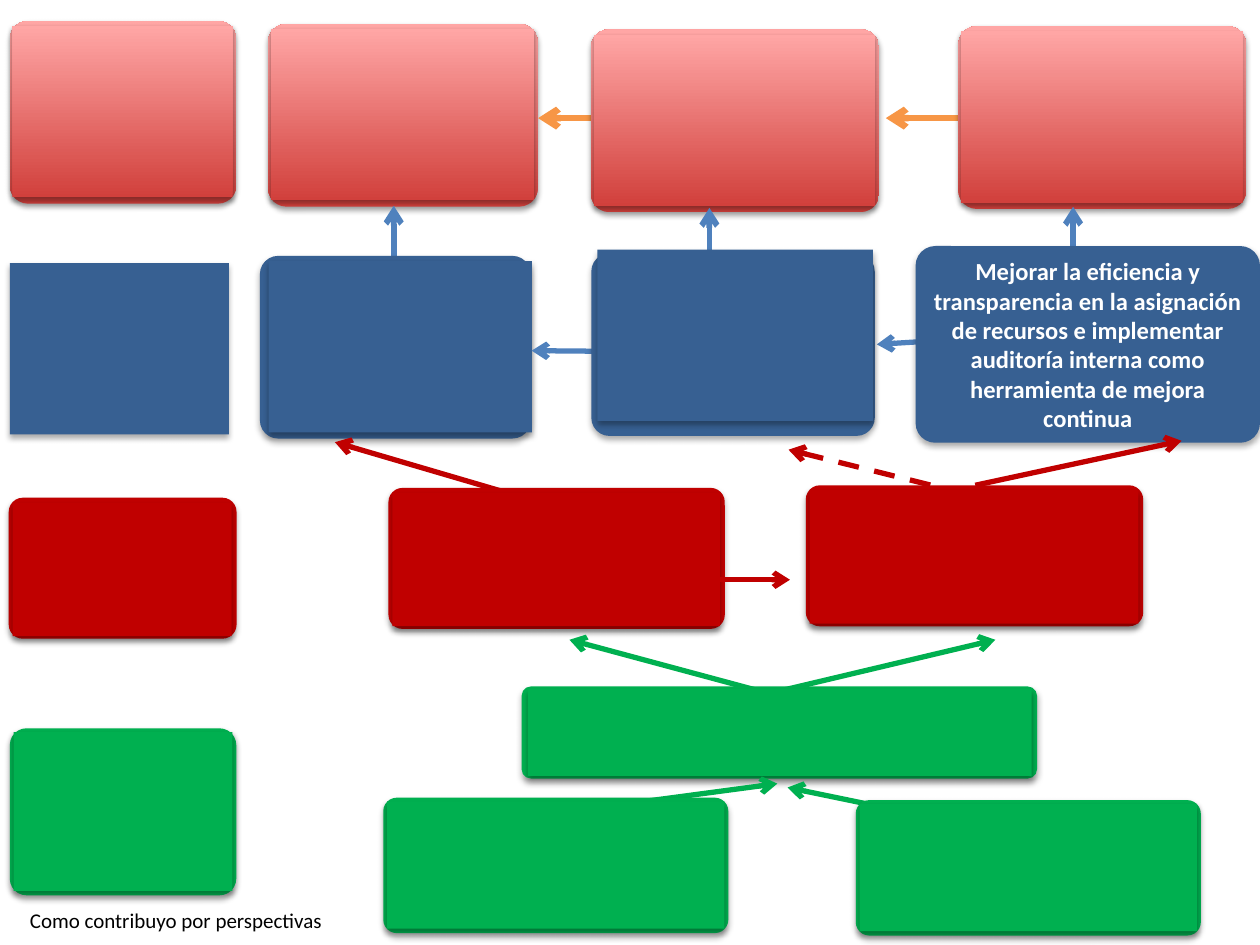
from dataclasses import dataclass

from lxml import etree
from pptx import Presentation
from pptx.dml.color import RGBColor
from pptx.enum.dml import MSO_LINE
from pptx.enum.shapes import MSO_CONNECTOR, MSO_SHAPE
from pptx.enum.text import MSO_ANCHOR, PP_ALIGN
from pptx.oxml.ns import qn
from pptx.util import Pt

DASH = MSO_LINE.DASH
STRAIGHT = MSO_CONNECTOR.STRAIGHT
RECTANGLE, ROUNDED = MSO_SHAPE.RECTANGLE, MSO_SHAPE.ROUNDED_RECTANGLE
MIDDLE = MSO_ANCHOR.MIDDLE
CENTER = PP_ALIGN.CENTER

FONT = "Calibri"
COLORS = {
    "coral_bottom": "D1403C",
    "coral_top": "FFA6A5",
    "blue": "376092",
    "red": "C00000",
    "green": "00B050",
    "orange_arrow": "F79646",
    "blue_arrow": "4F81BD",
    "shadow": "000000",
    "light": "FFFFFF",
    "dark": "000000",
}
INSETS = {
    "coral": (1.5, 3, 2, 3.5),
    "red": (2.2, 2.8, 2.8, 1.5),
    "green": (2.2, 2.2, 2.2, 2.5),
}


@dataclass(frozen=True)
class Box:
    left: float
    top: float
    width: float
    height: float

    def inset(self, left: float, top: float, right: float, bottom: float) -> "Box":
        return Box(self.left + left, self.top + top,
                   self.width - left - right, self.height - top - bottom)

    def lengths(self) -> tuple:
        return Pt(self.left), Pt(self.top), Pt(self.width), Pt(self.height)


@dataclass(frozen=True)
class Card:
    theme: str
    box: Box
    insets: tuple = ()
    text: str = ""


@dataclass(frozen=True)
class Arrow:
    color: str
    start: tuple
    end: tuple
    weight: float = 3
    dashed: bool = False


PERSPECTIVE_MAP = [
    Card("coral", Box(153.2, 13.7, 154, 104.4)),
    Arrow("orange_arrow", (371.5, 67.5), (307.5, 67.5), 3.75),
    Arrow("orange_arrow", (557.5, 67.5), (506.2, 67.5), 3.75),
    Card("coral", Box(547.7, 15, 164.4, 104.4)),
    Card("coral", Box(337.7, 16.8, 164.6, 104.4)),
    Arrow("blue_arrow", (225, 194.4), (225, 117.6), 3.25),
    Card("blue", Box(148.5, 146.2, 154.8, 104.4), (5, 3, -0.7, 3.5)),
    Arrow("blue_arrow", (405.4, 196.5), (405.4, 118.8), 3.25),
    Arrow("blue_arrow", (613.2, 195), (613.2, 118.2), 3.25),
    Arrow("blue_arrow", (340.5, 200.7), (303.8, 200.4)),
    Arrow("blue_arrow", (675.4, 186), (501.1, 196.8)),
    Card("blue", Box(337.9, 144.7, 162, 104.4), (3.5, -2, 1, 8.5)),
    Card("blue", Box(523.2, 140.6, 196.8, 112.4),
         text="Mejorar la eficiencia y transparencia en la asignación de recursos "
              "e implementar auditoría interna como herramienta de mejora continua"),
    Arrow("red", (314, 288.7), (191.4, 252.7)),
    Card("red", Box(222, 278.8, 192.2, 80.6)),
    Arrow("red", (557.3, 277.3), (675.2, 251.9)),
    Arrow("red", (572.4, 287.3), (450.6, 257), dashed=True),
    Card("red", Box(460.5, 277.3, 192.8, 80.6)),
    Arrow("red", (404, 331.3), (451.4, 331.3)),
    Arrow("green", (440.6, 396), (568.8, 365.6)),
    Arrow("green", (468, 404), (325.4, 365.6)),
    Card("green", Box(298.1, 392.3, 294.5, 52.6), (3.6, 1.5, 3, 1.5)),
    Arrow("green", (315.4, 465), (444.2, 447.8)),
    Arrow("green", (578.9, 476.6), (450, 450)),
    Card("green", Box(489, 457.2, 197.2, 77.4)),
    Card("green", Box(219, 455.8, 197.2, 77.4)),
    Card("coral", Box(5.6, 12, 129.4, 104.4)),
    Card("blue", Box(5.6, 150.3, 125.2, 98)),
    Card("red", Box(5, 284.4, 130.2, 80.6)),
    Card("green", Box(5.6, 416.2, 129.4, 95.4)),
]


def rgb(name: str) -> RGBColor:
    return RGBColor.from_string(COLORS[name])


def add_shadow(shape, theme: str) -> None:
    shape.shadow.inherit = False
    blur, distance, alpha = (3.1, 1.8, 35) if theme == "coral" else (3.5, 2.2, 32)
    effects = shape.element.spPr.find(qn("a:effectLst"))
    shadow = etree.SubElement(effects, qn("a:outerShdw"), blurRad=str(Pt(blur)),
                              dist=str(Pt(distance)), dir="5400000", rotWithShape="0")
    color = etree.SubElement(shadow, qn("a:srgbClr"), val=COLORS["shadow"])
    etree.SubElement(color, qn("a:alpha"), val=str(alpha * 1000))


def add_panel(slide, geometry, box: Box, theme: str):
    panel = slide.shapes.add_shape(geometry, *box.lengths())
    if geometry == ROUNDED:
        panel.adjustments[0] = 0.1
    if theme == "coral":
        panel.fill.gradient()
        panel.fill.gradient_angle = 90
        for stop, name in zip(panel.fill.gradient_stops, ("coral_bottom", "coral_top")):
            stop.color.rgb = rgb(name)
    else:
        panel.fill.solid()
        panel.fill.fore_color.rgb = rgb(theme)
    panel.line.fill.background()
    add_shadow(panel, theme)
    return panel


def write_text(shape, text: str, size: float, color: str, bold: bool = False) -> None:
    frame = shape.text_frame
    frame.word_wrap = True
    frame.vertical_anchor = MIDDLE
    run = frame.paragraphs[0].add_run()
    run.text = text
    run.font.name = FONT
    run.font.size = Pt(size)
    run.font.bold = bold
    run.font.color.rgb = rgb(color)


def draw_card(slide, card: Card) -> None:
    insets = card.insets or INSETS.get(card.theme)
    if insets is None:
        geometry = ROUNDED if card.text else RECTANGLE
        panel = add_panel(slide, geometry, card.box, card.theme)
        if card.text:
            write_text(panel, card.text, 14, "light", bold=True)
            panel.text_frame.margin_left = panel.text_frame.margin_right = Pt(5)
            panel.text_frame.paragraphs[0].alignment = CENTER
        return
    add_panel(slide, ROUNDED, card.box, card.theme)
    add_panel(slide, RECTANGLE, card.box.inset(*insets), card.theme)


def draw_arrow(slide, arrow: Arrow) -> None:
    points = (Pt(value) for value in arrow.start + arrow.end)
    connector = slide.shapes.add_connector(STRAIGHT, *points)
    connector.line.color.rgb = rgb(arrow.color)
    connector.line.width = Pt(arrow.weight)
    if arrow.dashed:
        connector.line.dash_style = DASH
    etree.SubElement(connector.line._get_or_add_ln(), qn("a:tailEnd"), type="arrow")
    etree.SubElement(connector.element.spPr, qn("a:effectLst"))


def main() -> None:
    presentation = Presentation()
    presentation.slide_width, presentation.slide_height = Pt(720), Pt(540)
    slide = presentation.slides.add_slide(presentation.slide_layouts[6])
    for part in PERSPECTIVE_MAP:
        if isinstance(part, Card):
            draw_card(slide, part)
        else:
            draw_arrow(slide, part)
    caption = slide.shapes.add_textbox(*Box(10, 512, 191.5, 28).lengths())
    write_text(caption, "Como contribuyo por perspectivas", 12, "dark")
    presentation.save("out.pptx")


if __name__ == "__main__":
    main()
